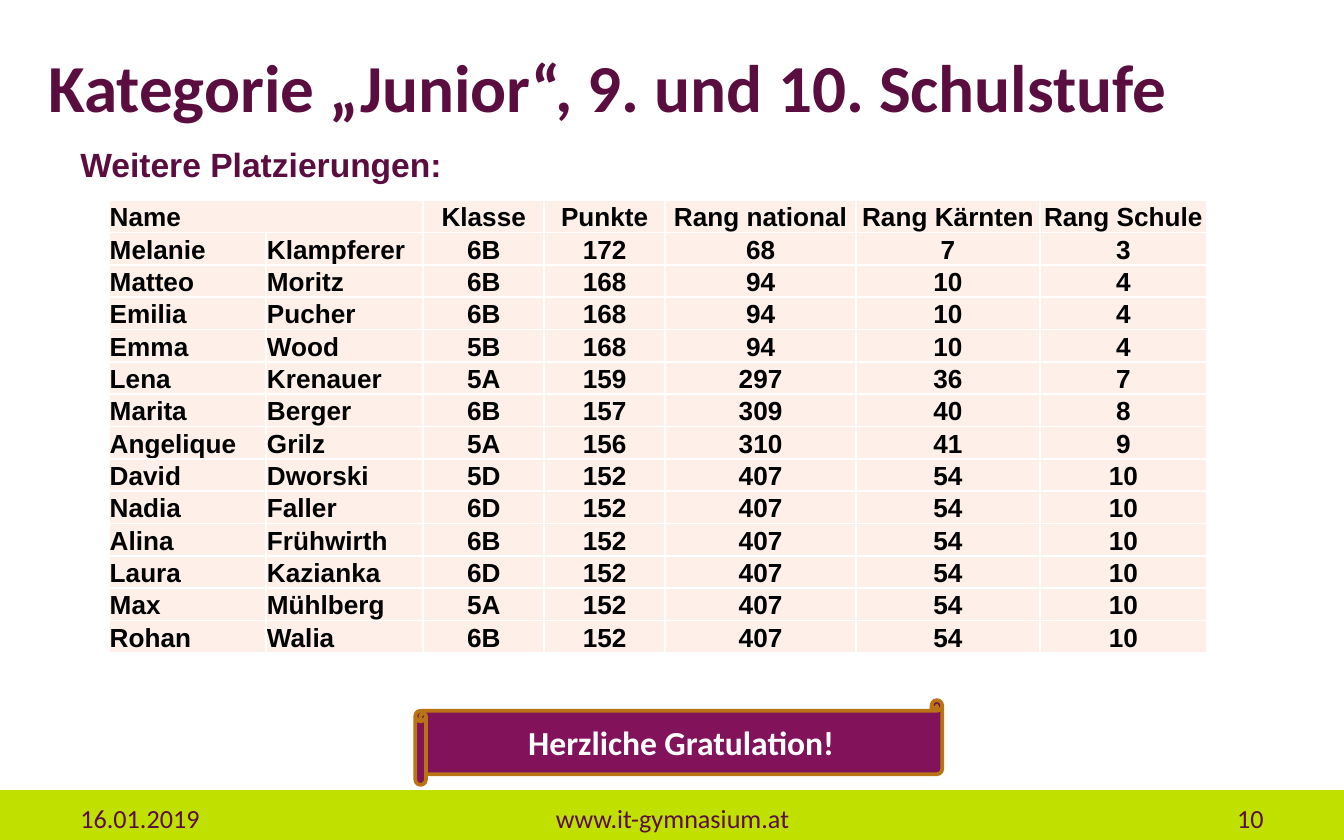
import lxml.etree
import pptx
import pptx.dml.color
import pptx.enum.shapes
import pptx.enum.text
import pptx.oxml.ns
import pptx.util

Inches = pptx.util.Inches
Pt = pptx.util.Pt
ALIGN = pptx.enum.text.PP_ALIGN
ANCHOR = pptx.enum.text.MSO_ANCHOR
SHAPE = pptx.enum.shapes.MSO_SHAPE

TITLE = "Kategorie „Junior“, 9. und 10. Schulstufe"
SUBTITLE = "Weitere Platzierungen:"
CONGRATULATION = "Herzliche Gratulation!"
FOOTERS = [
    # text, left, width, alignment
    ("16.01.2019", 0.5, 2.33, ALIGN.LEFT),
    ("www.it-gymnasium.at", 3.42, 3.17, ALIGN.CENTER),
    ("10", 7.17, 2.33, ALIGN.RIGHT),
]
RANKING = [
    ("Name", "", "Klasse", "Punkte", "Rang national", "Rang Kärnten", "Rang Schule"),
    ("Melanie", "Klampferer", "6B", 172, 68, 7, 3),
    ("Matteo", "Moritz", "6B", 168, 94, 10, 4),
    ("Emilia", "Pucher", "6B", 168, 94, 10, 4),
    ("Emma", "Wood", "5B", 168, 94, 10, 4),
    ("Lena", "Krenauer", "5A", 159, 297, 36, 7),
    ("Marita", "Berger", "6B", 157, 309, 40, 8),
    ("Angelique", "Grilz", "5A", 156, 310, 41, 9),
    ("David", "Dworski", "5D", 152, 407, 54, 10),
    ("Nadia", "Faller", "6D", 152, 407, 54, 10),
    ("Alina", "Frühwirth", "6B", 152, 407, 54, 10),
    ("Laura", "Kazianka", "6D", 152, 407, 54, 10),
    ("Max", "Mühlberg", "5A", 152, 407, 54, 10),
    ("Rohan", "Walia", "6B", 152, 407, 54, 10),
]
COLUMN_WIDTHS = [1.17, 1.17, 0.9, 0.9, 1.42, 1.37, 1.24]
NAME_COLUMNS = 2
ROW_HEIGHT = 0.23
FOOTER_TOP, FOOTER_HEIGHT = 5.88, 0.37

THEME = {
    "heading_font": "Calibri", "body_font": "Arial",
    "title_size": 36, "subtitle_size": 18, "banner_size": 18,
    "table_size": 14, "footer_size": 14,
    "plum": "5A0E3F", "black": "000000", "white": "FFFFFF",
    "lime": "C0E100", "cell": "FEEFE8", "banner": "82125A", "bronze": "B87415",
}


def color(name):
    return pptx.dml.color.RGBColor.from_string(THEME[name])


def write(frame, text, size, font, color_name, bold=True, align=ALIGN.LEFT):
    paragraph = frame.paragraphs[0]
    paragraph.alignment = align
    run = paragraph.add_run()
    run.text = text
    run.font.size = Pt(THEME[size])
    run.font.name = THEME[font]
    run.font.bold = bold
    run.font.color.rgb = color(color_name)


def add_text(slide, box, anchor, *style, **options):
    frame = slide.shapes.add_textbox(*map(Inches, box)).text_frame
    frame.word_wrap = True
    frame.vertical_anchor = anchor
    write(frame, *style, **options)


def add_filled_shape(slide, preset, box, fill):
    shape = slide.shapes.add_shape(preset, *map(Inches, box))
    shape.shadow.inherit = False
    shape.fill.solid()
    shape.fill.fore_color.rgb = color(fill)
    shape.line.fill.background()
    return shape


def set_borders(cell, color_name, width):
    """Put the four side lines ahead of the cell's fill, as the schema asks."""
    properties = cell._tc.get_or_add_tcPr()
    qn = pptx.oxml.ns.qn
    for position, side in enumerate(("a:lnL", "a:lnR", "a:lnT", "a:lnB")):
        line = lxml.etree.Element(qn(side), w=str(Pt(width)))
        fill = lxml.etree.SubElement(line, qn("a:solidFill"))
        lxml.etree.SubElement(fill, qn("a:srgbClr"), val=THEME[color_name])
        properties.insert(position, line)


def add_ranking(slide, left, top):
    rows, columns = len(RANKING), len(COLUMN_WIDTHS)
    table = slide.shapes.add_table(
        rows, columns, Inches(left), Inches(top),
        Inches(sum(COLUMN_WIDTHS)), Inches(ROW_HEIGHT * rows)).table
    for column, width in zip(table.columns, COLUMN_WIDTHS):
        column.width = Inches(width)
    for row, values in zip(table.rows, RANKING):
        row.height = Inches(ROW_HEIGHT)
        for index, (cell, value) in enumerate(zip(row.cells, values)):
            cell.margin_left = cell.margin_right = cell.margin_top = Pt(0.5)
            cell.margin_bottom = 0
            cell.vertical_anchor = ANCHOR.BOTTOM
            cell.fill.solid()
            cell.fill.fore_color.rgb = color("cell")
            set_borders(cell, "white", 1)
            if value != "":
                write(cell.text_frame, str(value), "table_size", "body_font", "black",
                      align=ALIGN.LEFT if index < NAME_COLUMNS else ALIGN.CENTER)
    table.cell(0, 0).merge(table.cell(0, NAME_COLUMNS - 1))


def main():
    presentation = pptx.Presentation()
    presentation.slide_width = Inches(10)
    presentation.slide_height = Inches(6.25)
    slide = presentation.slides.add_slide(presentation.slide_layouts[6])

    add_filled_shape(slide, SHAPE.RECTANGLE, (0, FOOTER_TOP, 10, FOOTER_HEIGHT), "lime")
    for text, left, width, align in FOOTERS:
        add_text(slide, (left, FOOTER_TOP, width, FOOTER_HEIGHT), ANCHOR.BOTTOM,
                 text, "footer_size", "heading_font", "plum", bold=False, align=align)

    add_ranking(slide, 0.81, 1.49)
    add_text(slide, (0.26, 0.08, 9.49, 1.11), ANCHOR.MIDDLE,
             TITLE, "title_size", "heading_font", "plum")
    add_text(slide, (0.5, 1.02, 3.73, 0.4), ANCHOR.TOP,
             SUBTITLE, "subtitle_size", "body_font", "plum")

    banner = add_filled_shape(slide, SHAPE.HORIZONTAL_SCROLL, (3.09, 5.21, 3.92, 0.63), "banner")
    banner.line.color.rgb = color("bronze")
    banner.line.width = Pt(2)
    banner.text_frame.vertical_anchor = ANCHOR.MIDDLE
    write(banner.text_frame, CONGRATULATION, "banner_size", "heading_font", "white",
          align=ALIGN.CENTER)

    presentation.save("out.pptx")


if __name__ == "__main__":
    main()
